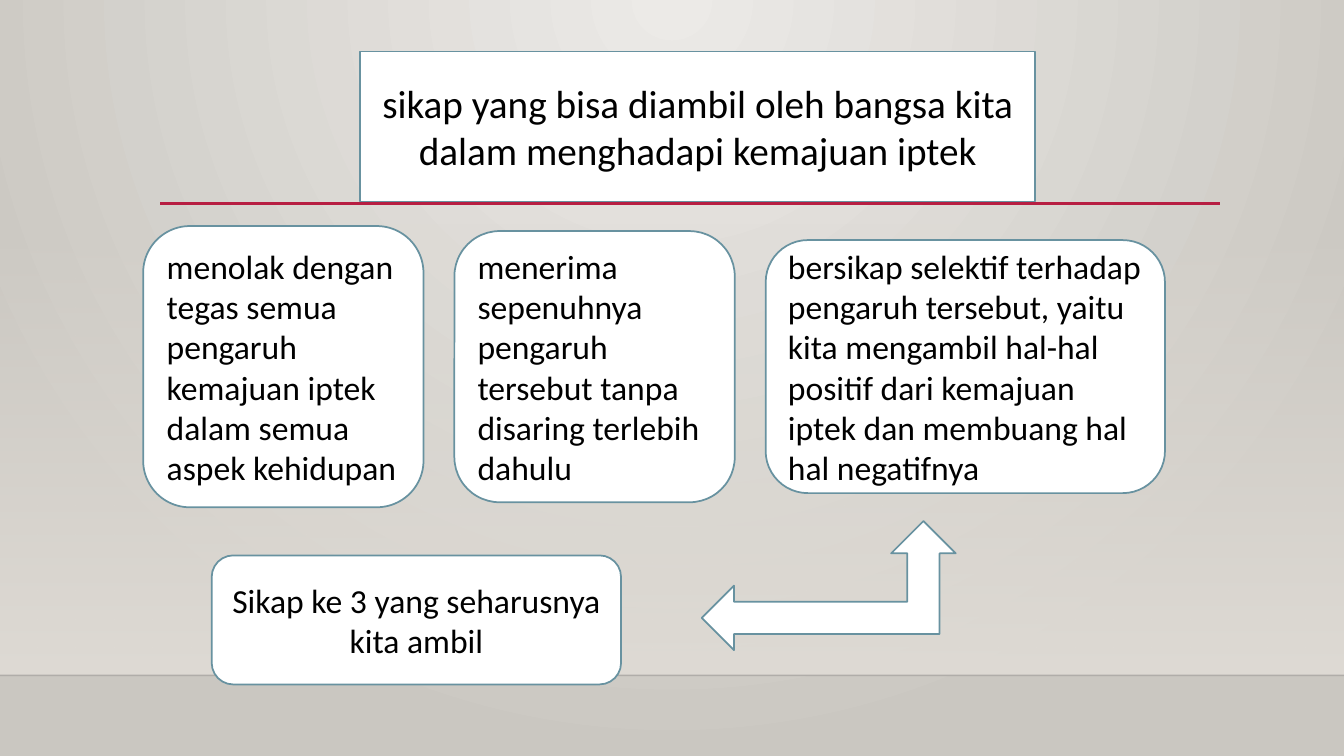
from dataclasses import dataclass

from lxml.etree import SubElement
from pptx import Presentation
from pptx.dml.color import RGBColor
from pptx.enum.shapes import MSO_CONNECTOR, MSO_SHAPE
from pptx.enum.text import MSO_ANCHOR, MSO_AUTO_SIZE, PP_ALIGN
from pptx.oxml import parse_xml
from pptx.oxml.ns import nsdecls, qn
from pptx.shapes.base import BaseShape
from pptx.slide import Slide
from pptx.util import Inches, Pt


@dataclass(frozen=True)
class Theme:
    font: str = "Calibri"
    title_size: int = 28
    body_size: int = 24
    text: str = "000000"
    card: str = "FFFFFF"
    outline: str = "6892A0"
    outline_width: float = 1.25
    accent: str = "B71E42"
    floor_line: str = "000001"
    glow: str = "ECEAE7"
    edge: str = "CAC7C1"
    wall: str = "DFDBD5"


@dataclass(frozen=True)
class Box:
    """A rectangle in percent of the slide's width and height."""
    left: float
    top: float
    width: float
    height: float


@dataclass(frozen=True)
class Attitude:
    text: str
    width: float
    height: float


@dataclass(frozen=True)
class Rule:
    """A horizontal line in percent of the slide, with its look."""
    start: float
    end: float
    top: float
    color: str
    weight: float
    opacity: int = 100


THEME = Theme()
SLIDE_WIDTH, SLIDE_HEIGHT = Inches(13.33), Inches(7.5)

TITLE = "sikap yang bisa diambil oleh bangsa kita dalam menghadapi kemajuan iptek"
TITLE_BOX = Box(26.78, 6.8, 50.26, 19.87)
CONCLUSION = "Sikap ke 3 yang seharusnya kita ambil"
CONCLUSION_BOX = Box(15.75, 73.47, 30.46, 17.07)
ARROW_BOX = Box(52.21, 68.93, 18.9, 17.07)
WALL_BOX = Box(0, 29.47, 100, 59.87)

ROW_LEFT, ROW_MIDDLE, ROW_GAP = 10.65, 48.5, 2.3
ATTITUDES = [
    Attitude("menolak dengan tegas semua pengaruh kemajuan iptek dalam semua "
             "aspek kehidupan", 20.86, 37.2),
    Attitude("menerima sepenuhnya pengaruh tersebut tanpa disaring terlebih "
             "dahulu", 20.86, 35.87),
    Attitude("bersikap selektif terhadap pengaruh tersebut, yaitu kita mengambil "
             "hal-hal positif dari kemajuan iptek dan membuang hal hal negatifnya",
             29.71, 33.47),
]
RULES = [
    Rule(0, 100, 89.33, THEME.floor_line, 1, 20),
    Rule(11.93, 90.77, 26.93, THEME.accent, 2.5),
]


def across(percent: float) -> int:
    return round(SLIDE_WIDTH * percent / 100)


def down(percent: float) -> int:
    return round(SLIDE_HEIGHT * percent / 100)


def rgb(color: str) -> RGBColor:
    return RGBColor.from_string(color)


def apply(target: object, values: dict[str, object]) -> None:
    for name, value in values.items():
        setattr(target, name, value)


def place(shape: BaseShape, box: Box) -> None:
    apply(shape, {"left": across(box.left), "top": down(box.top),
                  "width": across(box.width), "height": down(box.height)})


def set_opacity(color_element, percent: int) -> None:
    SubElement(color_element, qn("a:alpha")).set("val", str(percent * 1000))


def color_stops(fill, colors: tuple[str, str]) -> None:
    fill.gradient()
    for stop, color in zip(fill.gradient_stops, colors):
        stop.color.rgb = rgb(color)


def paint_background(slide: Slide) -> None:
    """Fill the slide with a glow that spreads from the top centre."""
    color_stops(slide.background.fill, (THEME.glow, THEME.edge))
    linear = slide._element.xpath("./p:cSld/p:bg//a:lin")[0]
    linear.getparent().replace(linear, parse_xml(
        f'<a:path {nsdecls("a")} path="circle">'
        '<a:fillToRect l="43000" t="0" r="43000" b="100000"/></a:path>'))


def add_preset(slide: Slide, kind: MSO_SHAPE, box: Box) -> BaseShape:
    shape = slide.shapes.add_shape(kind, 0, 0, 0, 0)
    place(shape, box)
    shape.shadow.inherit = False
    return shape


def add_wall(slide: Slide) -> None:
    """Add the band that fades in from clear at its top."""
    wall = add_preset(slide, MSO_SHAPE.RECTANGLE, WALL_BOX)
    color_stops(wall.fill, (THEME.wall, THEME.wall))
    wall.fill.gradient_angle = 270
    set_opacity(wall._element.spPr.xpath("./a:gradFill//a:srgbClr")[0], 0)
    wall.line.fill.background()


def add_rule(slide: Slide, rule: Rule) -> None:
    line = slide.shapes.add_connector(
        MSO_CONNECTOR.STRAIGHT, across(rule.start), down(rule.top),
        across(rule.end), down(rule.top))
    line.line.color.rgb = rgb(rule.color)
    line.line.width = Pt(rule.weight)
    properties = line._element.spPr
    if rule.opacity < 100:
        set_opacity(properties.xpath("./a:ln//a:srgbClr")[0], rule.opacity)
    SubElement(properties, qn("a:effectLst"))


def style_card(shape: BaseShape) -> None:
    shape.fill.solid()
    shape.fill.fore_color.rgb = rgb(THEME.card)
    shape.line.color.rgb = rgb(THEME.outline)
    shape.line.width = Pt(THEME.outline_width)


def write(shape: BaseShape, text: str, size: int, alignment: PP_ALIGN) -> None:
    frame = shape.text_frame
    apply(frame, {"text": text, "word_wrap": True,
                  "auto_size": MSO_AUTO_SIZE.NONE,
                  "vertical_anchor": MSO_ANCHOR.MIDDLE})
    paragraph = frame.paragraphs[0]
    paragraph.alignment = alignment
    font = paragraph.runs[0].font
    apply(font, {"name": THEME.font, "size": Pt(size)})
    font.color.rgb = rgb(THEME.text)


def add_card(slide: Slide, box: Box, text: str, alignment: PP_ALIGN) -> None:
    card = add_preset(slide, MSO_SHAPE.ROUNDED_RECTANGLE, box)
    style_card(card)
    write(card, text, THEME.body_size, alignment)


def format_title(slide: Slide) -> None:
    """Turn the title placeholder into a rounded card."""
    title = slide.shapes.title
    place(title, TITLE_BOX)
    title._element.spPr.find(qn("a:xfrm")).addnext(parse_xml(
        f'<a:prstGeom {nsdecls("a")} prst="roundRect"><a:avLst/></a:prstGeom>'))
    style_card(title)
    write(title, TITLE, THEME.title_size, PP_ALIGN.CENTER)


def main() -> None:
    presentation = Presentation()
    apply(presentation, {"slide_width": SLIDE_WIDTH, "slide_height": SLIDE_HEIGHT})
    slide = presentation.slides.add_slide(
        presentation.slide_layouts.get_by_name("Title Only"))
    paint_background(slide)
    add_wall(slide)
    for rule in RULES:
        add_rule(slide, rule)
    format_title(slide)
    left = ROW_LEFT
    for attitude in ATTITUDES:
        top = ROW_MIDDLE - attitude.height / 2
        add_card(slide, Box(left, top, attitude.width, attitude.height),
                 attitude.text, PP_ALIGN.LEFT)
        left += attitude.width + ROW_GAP
    style_card(add_preset(slide, MSO_SHAPE.LEFT_UP_ARROW, ARROW_BOX))
    add_card(slide, CONCLUSION_BOX, CONCLUSION, PP_ALIGN.CENTER)
    presentation.save("out.pptx")


if __name__ == "__main__":
    main()
